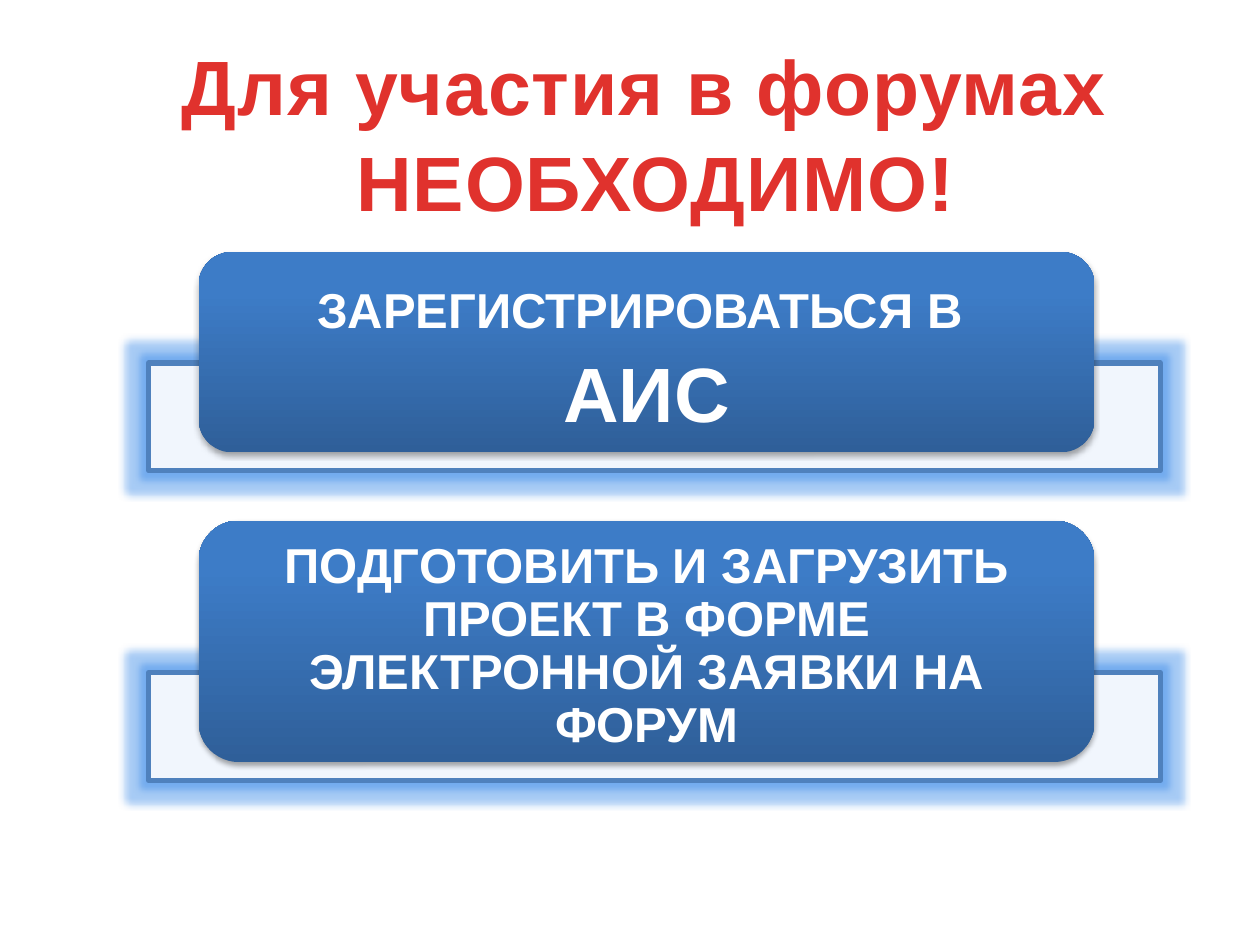
from lxml import etree
from pptx import Presentation
from pptx.dml.color import RGBColor
from pptx.enum.shapes import MSO_SHAPE
from pptx.enum.text import MSO_ANCHOR, PP_ALIGN
from pptx.oxml.ns import qn
from pptx.util import Pt

RECTANGLE = MSO_SHAPE.RECTANGLE
ROUNDED = MSO_SHAPE.ROUNDED_RECTANGLE
CENTER = PP_ALIGN.CENTER
TOP, MIDDLE = MSO_ANCHOR.TOP, MSO_ANCHOR.MIDDLE
TITLE_ONLY = 5
COLORS = {
    "title": "E0322D", "white": "FFFFFF", "frame": "4F81BD", "glow": "257DE6",
    "dark": "2F5F99", "light": "3D7CC7", "shadow": "000000",
}


def color(name):
    return RGBColor.from_string(COLORS[name])


def write_text(frame, lines, fill="white", anchor=MIDDLE, margins=(7, 4, 7, 4),
               line_spacing=1.0, gap=0, tracking=0):
    """Fill a text frame with centred bold lines, each a (text, size) pair."""
    frame.word_wrap = True
    frame.vertical_anchor = anchor
    (frame.margin_left, frame.margin_top,
     frame.margin_right, frame.margin_bottom) = map(Pt, margins)
    for index, (text, size) in enumerate(lines):
        para = frame.add_paragraph() if index else frame.paragraphs[0]
        para.alignment = CENTER
        para.line_spacing = line_spacing
        para.space_before = Pt(0)
        para.space_after = Pt(gap if index < len(lines) - 1 else 0)
        span = para.add_run()
        span.text = text
        span.font.name = "Arial"
        span.font.size = Pt(size)
        span.font.bold = True
        span.font.color.rgb = color(fill)
        if tracking:
            span.font._element.set("spc", str(int(tracking * 100)))


class SlideBuilder:
    def __init__(self, deck):
        self.slide = deck.slides.add_slide(deck.slide_layouts[TITLE_ONLY])

    def title(self, lines, left, top, width, height):
        box = self.slide.shapes.title
        box.left, box.top, box.width, box.height = map(Pt, (left, top, width, height))
        write_text(box.text_frame, lines, fill="title", anchor=TOP,
                   margins=(7, 7, 7, 4), gap=2, tracking=0.5)

    def shape(self, kind, left, top, width, height):
        box = self.slide.shapes.add_shape(kind, *map(Pt, (left, top, width, height)))
        box.shadow.inherit = False
        return box

    def effect(self, box, tag, color_name, alpha, **settings):
        effects = box._element.spPr.find(qn("a:effectLst"))
        effect = etree.SubElement(effects, qn(tag), {k: str(v) for k, v in settings.items()})
        tone = etree.SubElement(effect, qn("a:srgbClr"), val=COLORS[color_name])
        etree.SubElement(tone, qn("a:alpha"), val=str(alpha * 1000))

    def glowing_frame(self, left, top, width, height):
        box = self.shape(RECTANGLE, left, top, width, height)
        box.fill.solid()
        box.fill.fore_color.rgb = color("white")
        tone = box._element.spPr.find(qn("a:solidFill")).find(qn("a:srgbClr"))
        etree.SubElement(tone, qn("a:alpha"), val="90000")
        box.line.color.rgb = color("frame")
        box.line.width = Pt(3)
        self.effect(box, "a:glow", "glow", 40, rad=Pt(8))

    def step(self, lines, left, top, width, height, **style):
        box = self.shape(ROUNDED, left, top, width, height)
        box.fill.gradient()
        box.fill.gradient_angle = 90
        for stop, name, position in zip(box.fill.gradient_stops, ("dark", "light"), (0, 0.8)):
            stop.color.rgb = color(name)
            stop.position = position
        box.line.fill.background()
        self.effect(box, "a:outerShdw", "shadow", 35, blurRad=Pt(3.1),
                    dist=Pt(1.8), dir=5400000, rotWithShape=0)
        write_text(box.text_frame, lines, margins=(15, 7, 15, 0), **style)


def main():
    deck = Presentation()
    deck.slide_width, deck.slide_height = Pt(720), Pt(540)
    page = SlideBuilder(deck)

    # Heading
    page.title([("Для участия в форумах ", 44), ("НЕОБХОДИМО!", 44)], 65.5, 15, 618, 114)

    # Steps: each rounded box overlaps the frame behind it
    steps = [
        (144, 114.5, [("ЗАРЕГИСТРИРОВАТЬСЯ В ", 28), ("АИС", 44)], {"gap": 4}),
        (297.5, 138, [("ПОДГОТОВИТЬ И ЗАГРУЗИТЬ ПРОЕКТ В ФОРМЕ "
                       "ЭЛЕКТРОННОЙ ЗАЯВКИ НА ФОРУМ", 28)], {"line_spacing": 0.9}),
    ]
    for top, height, lines, style in steps:
        page.glowing_frame(85, top + height - 51, 578, 61.5)
        page.step(lines, 113.5, top, 512, height, **style)

    deck.save("out.pptx")


if __name__ == "__main__":
    main()
